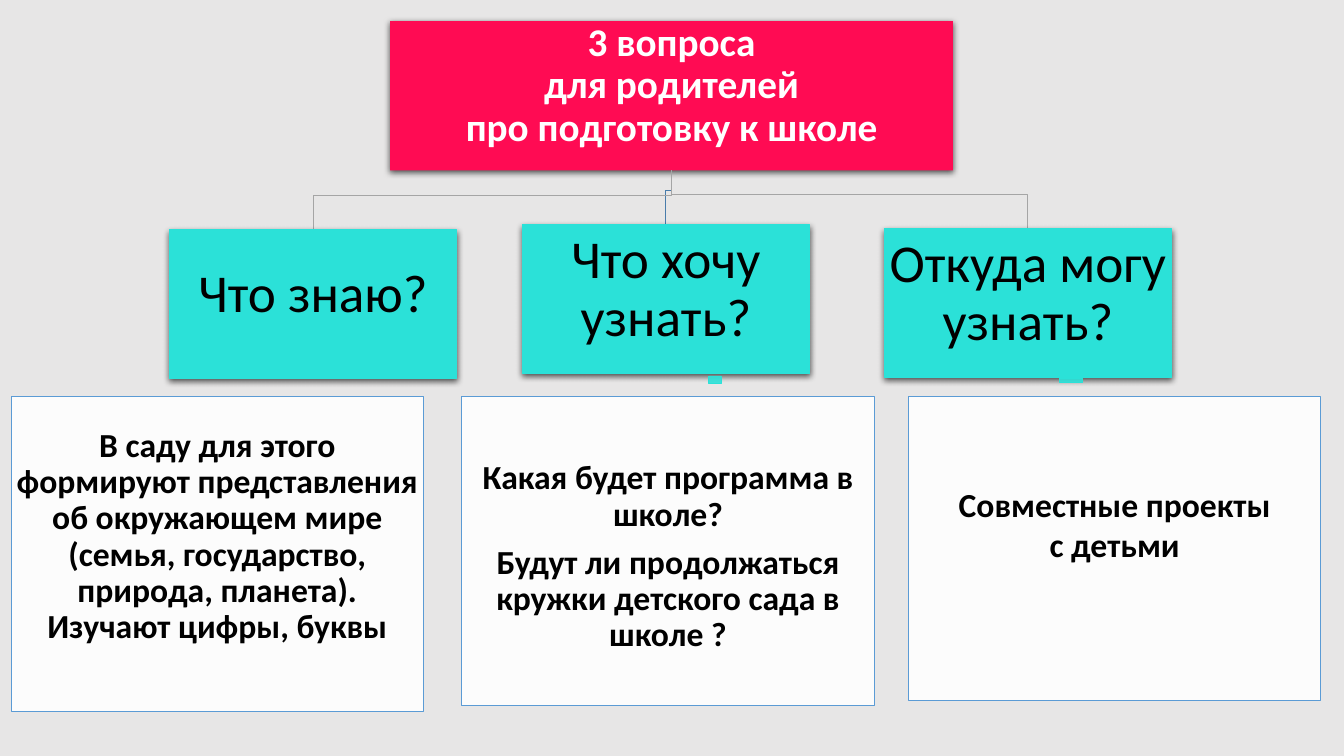
from lxml.etree import SubElement
from pptx import Presentation
from pptx.dml.color import RGBColor
from pptx.enum.shapes import MSO_SHAPE
from pptx.enum.text import MSO_ANCHOR, MSO_AUTO_SIZE, PP_ALIGN
from pptx.oxml.ns import qn
from pptx.util import Inches, Pt

COLORS = {
    "background": "E7E6E6",
    "title": "FF0B53",
    "question": "2BE1D8",
    "card": "FFFFFF",
    "card_line": "5B9BD5",
    "branch": "A5A5A5",
    "middle_branch": "497CAB",
    "light_text": "FFFFFF",
    "dark_text": "000000",
}


def style_box(box, fill, line=None, line_width=0.5, opacity=100, shadow=False):
    box.fill.solid()
    box.fill.fore_color.rgb = RGBColor.from_string(COLORS[fill])
    if opacity < 100:
        color = box._element.spPr.find(qn("a:solidFill"))[0]
        SubElement(color, qn("a:alpha"), val=str(opacity * 1000))
    if line:
        box.line.color.rgb = RGBColor.from_string(COLORS[line])
        box.line.width = Pt(line_width)
    else:
        box.line.fill.background()
    box.shadow.inherit = False
    if shadow:
        effects = box._element.spPr.find(qn("a:effectLst"))
        outer = SubElement(effects, qn("a:outerShdw"), blurRad=str(Pt(4.5)),
                           dist=str(Pt(1.5)), dir="5400000", rotWithShape="0")
        color = SubElement(outer, qn("a:srgbClr"), val="000000")
        SubElement(color, qn("a:alpha"), val="63000")


def write_text(box, lines, size, color="dark_text", bold=False, spacing=0.9,
               gap=0, side=0.03, top=0.03, bottom=0.21):
    frame = box.text_frame
    frame.word_wrap = True
    frame.auto_size = MSO_AUTO_SIZE.NONE
    frame.vertical_anchor = MSO_ANCHOR.MIDDLE
    frame.margin_left = frame.margin_right = Inches(side)
    frame.margin_top, frame.margin_bottom = Inches(top), Inches(bottom)
    for index, line in enumerate(lines):
        para = frame.add_paragraph() if index else frame.paragraphs[0]
        para.alignment = PP_ALIGN.CENTER
        para.line_spacing = spacing
        para.space_before = Pt(gap if index else 0)
        span = para.add_run()
        span.text = line
        span.font.name = "Calibri"
        span.font.size = Pt(size)
        span.font.bold = bold
        span.font.color.rgb = RGBColor.from_string(COLORS[color])


deck = Presentation()
deck.slide_width, deck.slide_height = Inches(13.33), Inches(7.5)
page = deck.slides.add_slide(deck.slide_layouts[5])
page.background.fill.solid()
page.background.fill.fore_color.rgb = RGBColor.from_string(COLORS["background"])

# Title
title = page.shapes.title
title.left, title.top = Inches(3.87), Inches(0.21)
title.width, title.height = Inches(5.58), Inches(1.48)
style_box(title, "title", shadow=True)
write_text(title, ["3 вопроса", "для родителей", "про подготовку к школе"], 28,
           color="light_text", bold=True, side=0.02, top=0.02)

# Branches from the title to the questions
TRUNK_X, TRUNK_TOP = 6.66, 1.69
branches = [
    (10.19, 1.93, 2.27, "branch", 0.5),
    (6.6, 1.89, 2.23, "middle_branch", 1),
    (3.11, 1.94, 2.28, "branch", 0.5),
]
for end_x, bend_y, end_y, color, width in branches:
    builder = page.shapes.build_freeform(Inches(TRUNK_X), Inches(TRUNK_TOP))
    corners = [(TRUNK_X, bend_y), (end_x, bend_y), (end_x, end_y)]
    builder.add_line_segments([(Inches(x), Inches(y)) for x, y in corners], close=False)
    branch = builder.convert_to_shape()
    branch.fill.background()
    branch.line.color.rgb = RGBColor.from_string(COLORS[color])
    branch.line.width = Pt(width)
    branch.shadow.inherit = False

# Questions
questions = [
    (1.68, 2.28, "Что знаю?"),
    (5.18, 2.23, "Что хочу узнать?"),
    (8.77, 2.27, "Откуда могу узнать?"),
]
for left, top, question in questions:
    box = page.shapes.add_shape(MSO_SHAPE.RECTANGLE, Inches(left), Inches(top),
                                Inches(2.85), Inches(1.48))
    style_box(box, "question", line="question", line_width=0.75, shadow=True)
    write_text(box, [question], 38)

# Small tabs under the questions
for left, top, width, height in [(7.03, 3.73, 0.12, 0.07), (10.51, 3.75, 0.23, 0.04)]:
    tab = page.shapes.add_shape(MSO_SHAPE.RECTANGLE, Inches(left), Inches(top),
                                Inches(width), Inches(height))
    style_box(tab, "question", line="question", opacity=90)

# Answer cards
answers = [
    (0.11, 3.13, ["В саду для этого формируют представления об окружающем мире "
                  "(семья, государство, природа, планета). Изучают цифры, буквы"],
     {"top": 0.01, "bottom": 0.34}),
    (4.58, 3.07, ["Какая будет программа в школе?",
                  "Будут ли продолжаться кружки детского сада в школе ?"],
     {"top": 0.14, "bottom": 0.01, "gap": 8.4}),
    (9.01, 3.02, ["Совместные проекты", "с детьми"],
     {"top": 0.05, "bottom": 0.53, "spacing": 1.0}),
]
for left, height, lines, layout in answers:
    card = page.shapes.add_shape(MSO_SHAPE.RECTANGLE, Inches(left), Inches(3.93),
                                 Inches(4.09), Inches(height))
    style_box(card, "card", line="card_line", opacity=90)
    write_text(card, lines, 24, bold=True, side=0.04, **layout)

deck.save("out.pptx")
